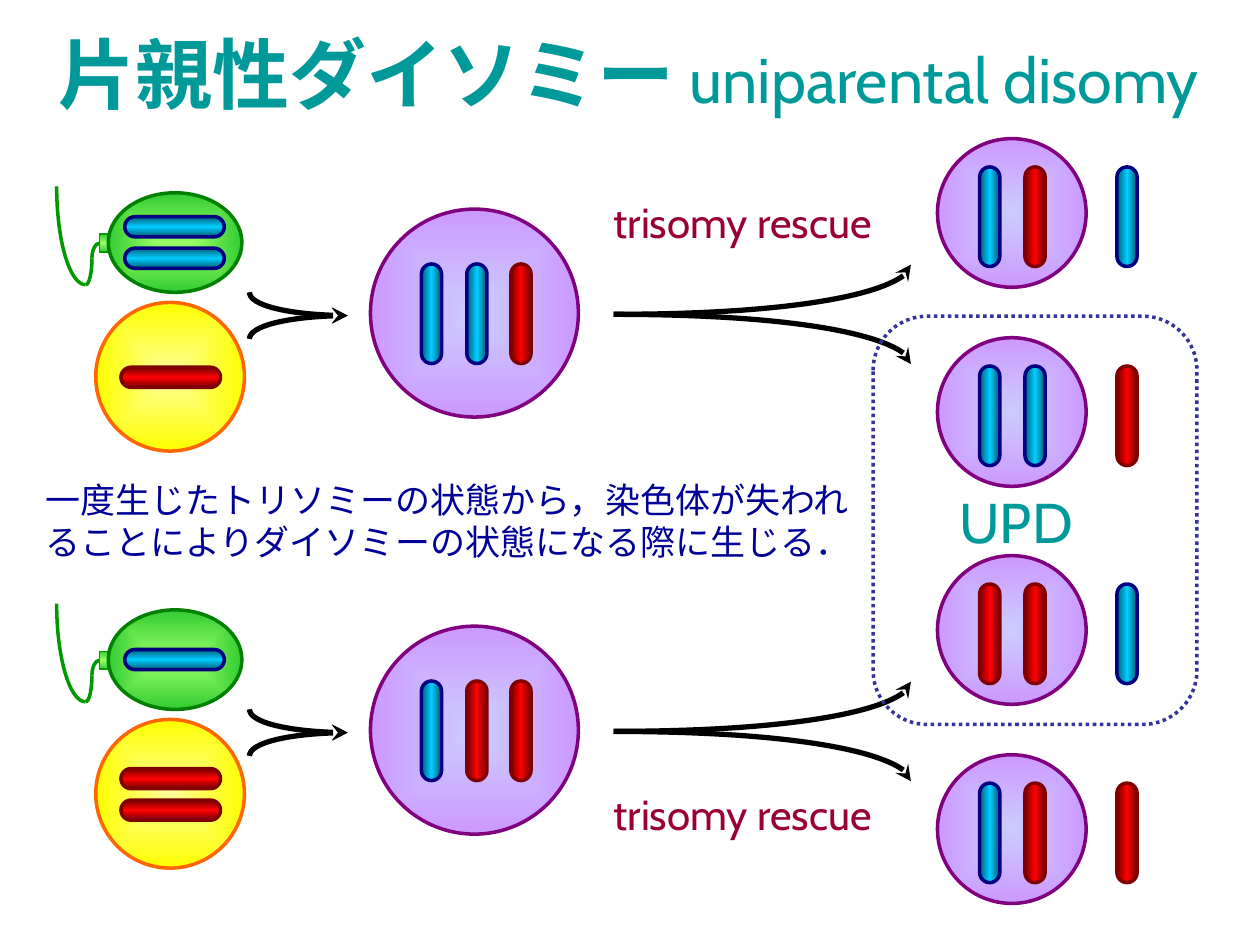
from lxml.etree import SubElement
from pptx import Presentation
from pptx.dml.color import RGBColor
from pptx.enum.dml import MSO_LINE
from pptx.enum.shapes import MSO_SHAPE
from pptx.enum.text import MSO_AUTO_SIZE, PP_ALIGN
from pptx.oxml import parse_xml
from pptx.oxml.ns import nsdecls, qn
from pptx.util import Inches, Pt

TEAL = RGBColor(0x00, 0x99, 0x99)
CRIMSON = RGBColor(0x99, 0x00, 0x33)
NAVY = RGBColor(0x00, 0x00, 0x99)
INDIGO = RGBColor(0x33, 0x33, 0x99)
BLACK = RGBColor(0x00, 0x00, 0x00)
TAIL_GREEN = RGBColor(0x00, 0x99, 0x00)
SPERM_EDGE = RGBColor(0x00, 0x80, 0x00)
EGG_EDGE = RGBColor(0xFF, 0x66, 0x00)
CELL_EDGE = RGBColor(0x80, 0x00, 0x80)
LEAF = RGBColor(0x33, 0xCC, 0x33)
LIME = RGBColor(0x99, 0xFF, 0x66)
CREAM = RGBColor(0xFF, 0xFF, 0x99)
YELLOW = RGBColor(0xFF, 0xFF, 0x00)
LAVENDER = RGBColor(0xCC, 0xCC, 0xFF)
LILAC = RGBColor(0xCC, 0x99, 0xFF)
DEEP_BLUE = RGBColor(0x00, 0x5E, 0x76)
SKY = RGBColor(0x00, 0xCC, 0xFF)
BLUE_EDGE = RGBColor(0x00, 0x00, 0x80)
DEEP_RED = RGBColor(0x76, 0x00, 0x00)
RED = RGBColor(0xFF, 0x00, 0x00)
RED_EDGE = RGBColor(0x80, 0x00, 0x00)

CHROMOSOMES = {
    "B": ([DEEP_BLUE, SKY, DEEP_BLUE], BLUE_EDGE),
    "R": ([DEEP_RED, RED, DEEP_RED], RED_EDGE),
}

deck = Presentation()
deck.slide_width, deck.slide_height = Inches(10), Inches(7.5)
slide = deck.slides.add_slide(deck.slide_layouts[6])
UNIT = deck.slide_width / 100


def add_body(kind, center_x, center_y, width, height, colors, edge, weight=2, rotation=0):
    body = slide.shapes.add_shape(
        kind, round((center_x - width / 2) * UNIT), round((center_y - height / 2) * UNIT),
        round(width * UNIT), round(height * UNIT))
    body.shadow.inherit = False
    body.rotation = rotation
    body.line.color.rgb = edge
    body.line.width = Pt(weight)
    if kind == MSO_SHAPE.ROUNDED_RECTANGLE:
        body.adjustments[0] = 0.5
    step = 100000 // (len(colors) - 1)
    stops = "".join(f'<a:gs pos="{i * step}"><a:srgbClr val="{color}"/></a:gs>'
                    for i, color in enumerate(colors))
    direction = ('<a:path path="shape"><a:fillToRect l="50000" t="50000" r="50000" b="50000"/></a:path>'
                 if len(colors) == 2 else '<a:lin ang="5400000" scaled="1"/>')
    body.fill.background()
    empty_fill = body.element.spPr.find(qn("a:noFill"))
    body.element.spPr.replace(empty_fill, parse_xml(
        f'<a:gradFill {nsdecls("a")} rotWithShape="1"><a:gsLst>{stops}</a:gsLst>{direction}</a:gradFill>'))


def add_arc(start, end, color, weight, arrow_end=None):
    builder = slide.shapes.build_freeform(round(start[0] * UNIT), round(start[1] * UNIT))
    builder.add_line_segments([(round(end[0] * UNIT), round(end[1] * UNIT))], close=False)
    arc = builder.convert_to_shape()
    arc.shadow.inherit = False
    arc.fill.background()
    arc.line.color.rgb = color
    arc.line.width = Pt(weight)
    (x0, y0), (x1, y1) = [(int(point.get("x")), int(point.get("y")))
                          for point in arc.element.iter(qn("a:pt"))]
    segment = next(arc.element.iter(qn("a:lnTo")))
    curve = SubElement(segment.getparent(), qn("a:cubicBezTo"))
    for x, y in ((x0 + 0.55 * (x1 - x0), y0), (x1, y0 + 0.45 * (y1 - y0)), (x1, y1)):
        SubElement(curve, qn("a:pt"), x=str(round(x)), y=str(round(y)))
    segment.getparent().remove(segment)
    if arrow_end:
        SubElement(arc.line._get_or_add_ln(), qn(f"a:{arrow_end}"), type="stealth")


ROW_STEP = 33.1
PAIR_GAP = 2.5
DAUGHTER_STEP = 15.8
ZYGOTE_SLOTS = (34.25, 37.85, 41.35)
DAUGHTER_SLOTS = (78.55, 82.15, 89.45)

crosses = [
    ("BB", "R", "BBR", ("BRB", "BBR")),
    ("B", "RR", "BRR", ("RRB", "BRR")),
]

for row, (sperm, egg, zygote, daughters) in enumerate(crosses):
    top = row * ROW_STEP

    add_arc((6.8, top + 22.6), (7.3, top + 20.5), TAIL_GREEN, 2)
    add_body(MSO_SHAPE.RECTANGLE, 8.6, top + 19.3, 1.4, 1.4, [LEAF, LIME, LEAF], TAIL_GREEN, 1)
    add_body(MSO_SHAPE.OVAL, 13.9, top + 19.25, 10.6, 7.9, [LIME, LEAF], SPERM_EDGE)
    add_arc((7.9, top + 19.3), (7.3, top + 20.5), TAIL_GREEN, 2)
    add_arc((6.8, top + 22.6), (4.5, top + 14.8), TAIL_GREEN, 2)
    add_body(MSO_SHAPE.OVAL, 13.5, top + 29.9, 11.8, 11.8, [CREAM, YELLOW], EGG_EDGE)
    add_body(MSO_SHAPE.OVAL, 37.65, top + 24.85, 16.5, 16.5, [LAVENDER, LILAC], CELL_EDGE)

    for gamete, x, y in ((sperm, 13.85, 19.25), (egg, 13.55, 29.95)):
        for i, parent in enumerate(gamete):
            offset = (i - (len(gamete) - 1) / 2) * PAIR_GAP
            add_body(MSO_SHAPE.ROUNDED_RECTANGLE, x, top + y + offset, 7.9, 1.6, *CHROMOSOMES[parent])

    vertical_sets = [(zygote, ZYGOTE_SLOTS, top + 24.9)]
    for i, daughter in enumerate(daughters):
        y = top + 16.9 + i * DAUGHTER_STEP
        add_body(MSO_SHAPE.OVAL, 80.3, y, 11.8, 11.8, [LAVENDER, LILAC], CELL_EDGE)
        vertical_sets.append((daughter, DAUGHTER_SLOTS, y + 0.3))
    for parents, slots, y in vertical_sets:
        for parent, x in zip(parents, slots):
            add_body(MSO_SHAPE.ROUNDED_RECTANGLE, x, y, 7.9, 1.6, *CHROMOSOMES[parent], rotation=270)

    for side in (-1, 1):
        add_arc((27.6, top + 25.05), (19.8, top + 25.05 + side * 1.85), BLACK, 3, "headEnd")
        add_arc((48.7, top + 24.95), (72.3, top + 24.95 + side * 3.95), BLACK, 3, "tailEnd")

upd_frame = slide.shapes.add_shape(
    MSO_SHAPE.ROUNDED_RECTANGLE, *[round(n * UNIT) for n in (69.3, 25.1, 25.7, 32.4)])
upd_frame.shadow.inherit = False
upd_frame.adjustments[0] = 0.167
upd_frame.fill.background()
upd_frame.line.color.rgb = INDIGO
upd_frame.line.width = Pt(2)
upd_frame.line.dash_style = MSO_LINE.ROUND_DOT

captions = [
    ("片親性ダイソミー", (0.6, 1.6, 98.6, 8.4), 44, "Noto Sans CJK JP", TEAL, PP_ALIGN.CENTER),
    ("trisomy rescue", (47.7, 15.1, 24.9, 5), 24, "Cabin", CRIMSON, PP_ALIGN.LEFT),
    ("trisomy rescue", (47.7, 62.1, 24.9, 5), 24, "Cabin", CRIMSON, PP_ALIGN.LEFT),
    ("UPD", (74, 38.2, 13.3, 6.4), 32, "Cabin", TEAL, PP_ALIGN.CENTER),
    ("一度生じたトリソミーの状態から，染色体が失われることによりダイソミーの状態になる際に生じる．",
     (2.6, 37.5, 66.1, 7.7), 20, "Arial", NAVY, PP_ALIGN.LEFT),
]
paragraphs = []
for wording, box, size, typeface, color, alignment in captions:
    frame = slide.shapes.add_textbox(*[round(n * UNIT) for n in box]).text_frame
    frame.word_wrap = True
    frame.auto_size = MSO_AUTO_SIZE.SHAPE_TO_FIT_TEXT
    paragraph = frame.paragraphs[0]
    paragraph.alignment = alignment
    paragraph.add_run().text = wording
    paragraph.font.size = Pt(size)
    paragraph.font.name = typeface
    paragraph.font.color.rgb = color
    paragraphs.append(paragraph)

title = paragraphs[0]
japanese = title.runs[0]
japanese.font.bold = True
SubElement(japanese.font._element, qn("a:ea"), typeface="Noto Sans CJK JP")
for wording, typeface, bold in ((" ", "Noto Sans CJK JP", True), ("uniparental disomy", "Cabin", False)):
    english = title.add_run()
    english.text = wording
    english.font.size = Pt(36)
    english.font.name = typeface
    english.font.bold = bold

deck.save("out.pptx")
